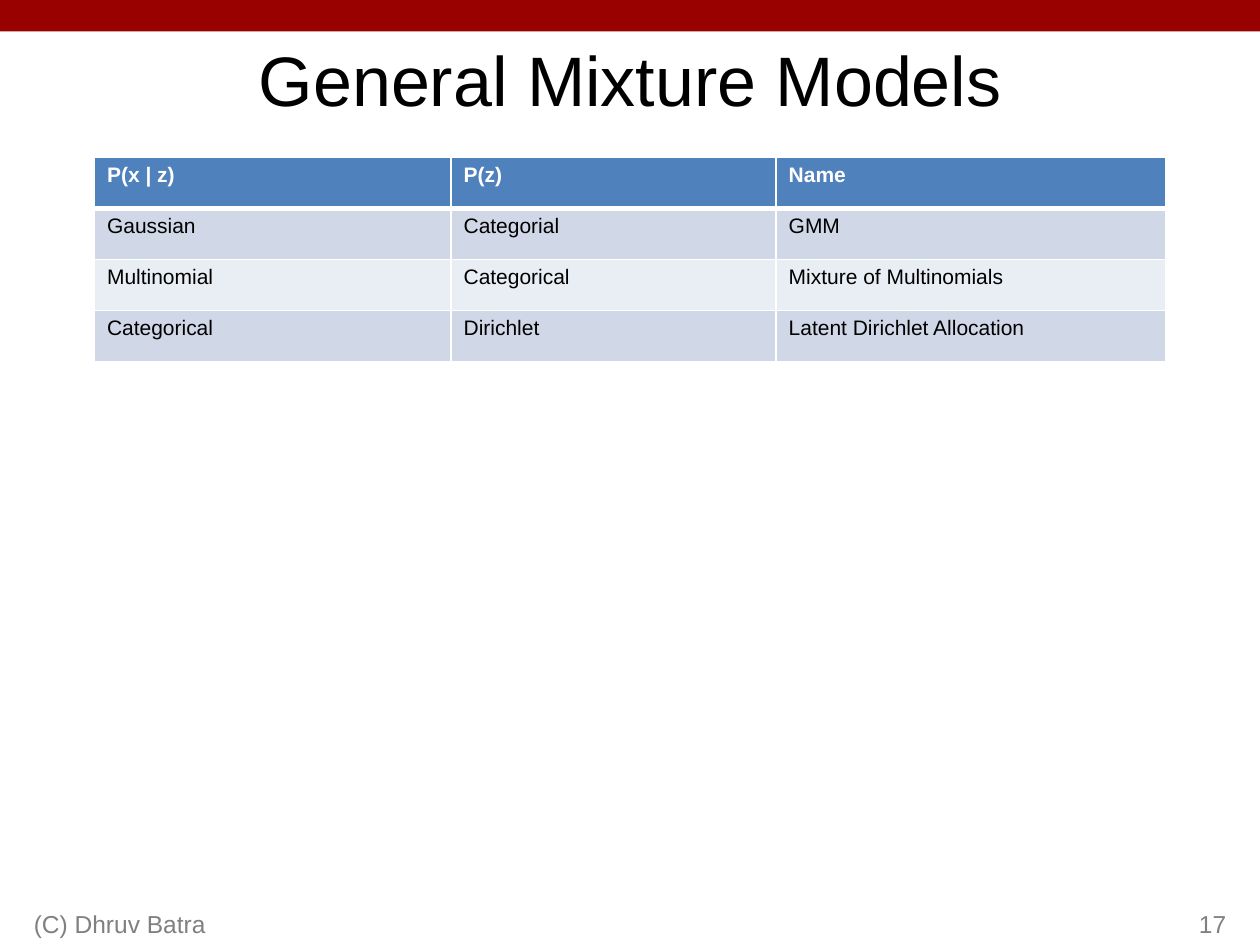
"""Build the General Mixture Models slide."""
from lxml import etree
from pptx import Presentation
from pptx.dml.color import RGBColor
from pptx.enum.shapes import MSO_SHAPE
from pptx.enum.text import MSO_ANCHOR, PP_ALIGN
from pptx.oxml.ns import qn
from pptx.util import Inches, Pt

RECTANGLE = MSO_SHAPE.RECTANGLE
LEFT, CENTER, RIGHT = PP_ALIGN.LEFT, PP_ALIGN.CENTER, PP_ALIGN.RIGHT
TOP, MIDDLE, BOTTOM = MSO_ANCHOR.TOP, MSO_ANCHOR.MIDDLE, MSO_ANCHOR.BOTTOM

DARK_RED = RGBColor(0x99, 0x00, 0x00)
BLACK = RGBColor(0x00, 0x00, 0x00)
GRAY = RGBColor(0x80, 0x80, 0x80)
WHITE = RGBColor(0xFF, 0xFF, 0xFF)
HEADER_BLUE = RGBColor(0x4F, 0x81, 0xBD)
BAND_DARK = RGBColor(0xD0, 0xD8, 0xE8)
BAND_LIGHT = RGBColor(0xE9, 0xED, 0xF4)

FONT = "Arial"
COLUMN_WIDTHS = (2.83, 2.58, 3.09)
TABLE_HEIGHT = 1.62
MODELS = (
    ("P(x | z)", "P(z)", "Name"),
    ("Gaussian", "Categorial", "GMM"),
    ("Multinomial", "Categorical", "Mixture of Multinomials"),
    ("Categorical", "Dirichlet", "Latent Dirichlet Allocation"),
)


def set_text(tf, text, size=12, color=BLACK, bold=False, align=LEFT, anchor=TOP):
    tf.word_wrap = True
    tf.vertical_anchor = anchor
    p = tf.paragraphs[0]
    p.alignment = align
    r = p.add_run()
    r.text = text
    r.font.name = FONT
    r.font.size = Pt(size)
    r.font.bold = bold
    r.font.color.rgb = color


def set_border(cell, side, width, color=WHITE):
    tc_pr = cell._tc.get_or_add_tcPr()
    ln = etree.SubElement(tc_pr, qn(f"a:ln{side}"), w=str(Pt(width)))
    fill = etree.SubElement(ln, qn("a:solidFill"))
    etree.SubElement(fill, qn("a:srgbClr"), val=str(color))


def add_bar(s):
    sp = s.shapes.add_shape(RECTANGLE, 0, 0, Inches(10), Inches(0.25))
    sp.shadow.inherit = False
    sp.fill.solid()
    sp.fill.fore_color.rgb = DARK_RED
    sp.line.fill.background()


def add_title(s, text):
    title = s.shapes.title
    title.left, title.top = Inches(0.75), Inches(0.25)
    title.width, title.height = Inches(8.5), Inches(0.75)
    set_text(title.text_frame, text, size=40, align=CENTER, anchor=MIDDLE)


def add_footer(s, text, left, width, align):
    sp = s.shapes.add_textbox(Inches(left), Inches(7), Inches(width), Inches(0.5))
    set_text(sp.text_frame, text, size=14, color=GRAY, align=align, anchor=BOTTOM)


def add_model_table(s):
    frame = s.shapes.add_table(
        len(MODELS), len(COLUMN_WIDTHS),
        Inches(0.75), Inches(1.25), Inches(8.5), Inches(TABLE_HEIGHT),
    )
    table = frame.table
    for column, width in zip(table.columns, COLUMN_WIDTHS):
        column.width = Inches(width)
    for i, row in enumerate(MODELS):
        header = i == 0
        band = BAND_DARK if i % 2 else BAND_LIGHT
        widths = {"L": 1, "R": 1, "T": 3 if i == 1 else 1, "B": 3 if header else 1}
        for j, text in enumerate(row):
            cell = table.cell(i, j)
            set_text(cell.text_frame, text, bold=header,
                     color=WHITE if header else BLACK)
            for side, width in widths.items():
                set_border(cell, side, width)
            cell.fill.solid()
            cell.fill.fore_color.rgb = HEADER_BLUE if header else band


def main():
    prs = Presentation()
    prs.slide_width, prs.slide_height = Inches(10), Inches(7.5)
    s = prs.slides.add_slide(prs.slide_layouts[5])
    add_bar(s)
    add_title(s, "General Mixture Models")
    add_footer(s, "(C) Dhruv Batra", 0.17, 3.17, LEFT)
    add_footer(s, "17", 7.75, 2.08, RIGHT)
    add_model_table(s)
    prs.save("out.pptx")


if __name__ == "__main__":
    main()
